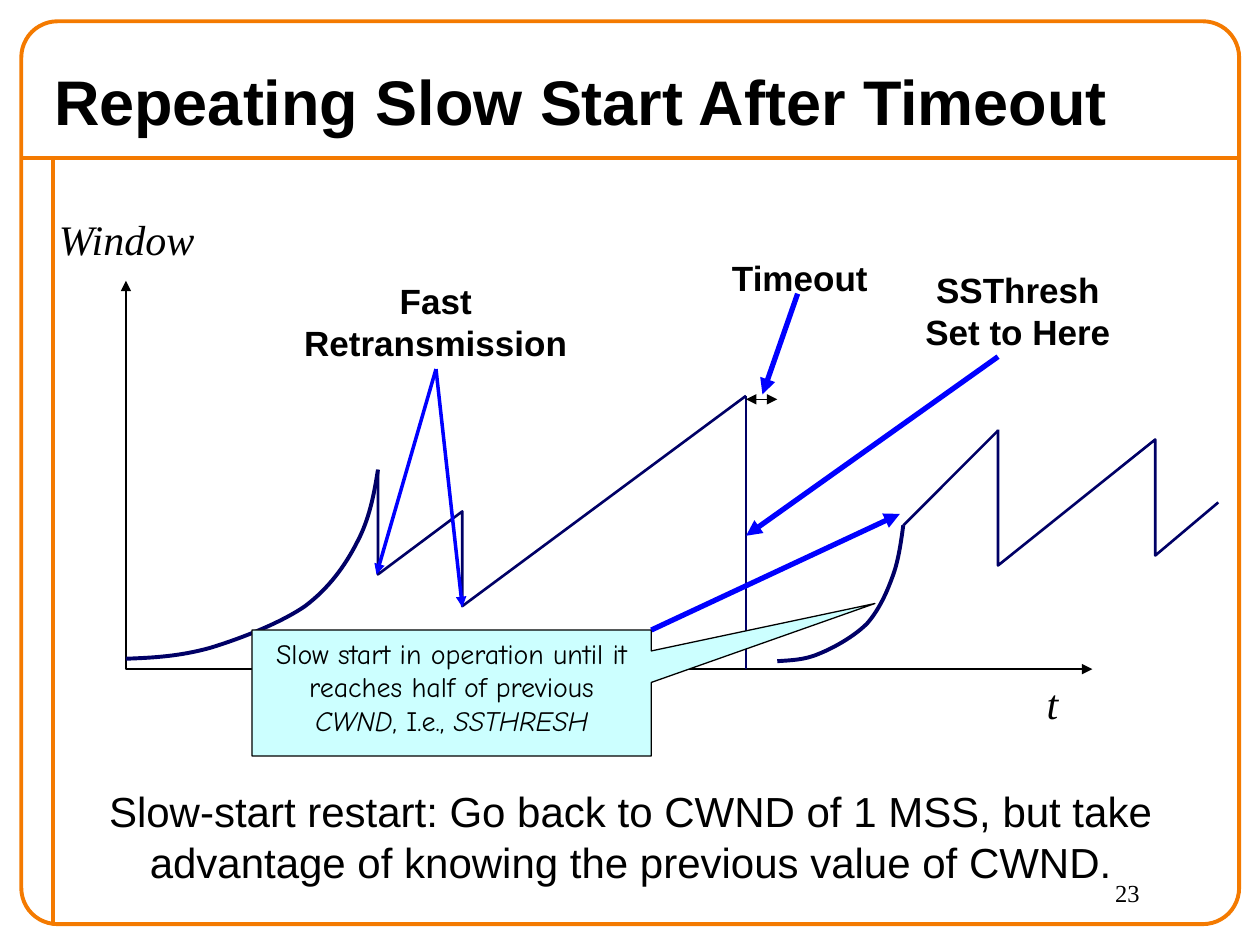
from lxml.etree import SubElement as Sub
from pptx import Presentation
from pptx.dml.color import RGBColor
from pptx.enum.shapes import MSO_CONNECTOR as Link, MSO_SHAPE as Kind
from pptx.enum.text import MSO_ANCHOR as Anchor, PP_ALIGN as Align
from pptx.oxml.ns import qn
from pptx.util import Cm, Pt

ORANGE = RGBColor(0xF4, 0x7A, 0x00)
NAVY = RGBColor(0x00, 0x00, 0x66)
BLUE = RGBColor(0x00, 0x00, 0xFF)
BLACK = RGBColor(0x00, 0x00, 0x00)
AQUA = RGBColor(0xCC, 0xFF, 0xFF)
SANS, SERIF, COMIC = "Arial", "Times New Roman", "Comic Neue"


def style(shape, color, width, ends=()):
    shape.line.color.rgb = color
    shape.line.width = Pt(width)
    line = shape.line._get_or_add_ln()
    for end in ends:
        Sub(line, qn(f"a:{end}End"), type="triangle")


def link(slide, box, start, stop, color, width, ends=()):
    x, y = box[:2]
    line = slide.shapes.add_connector(
        Link.STRAIGHT, Cm(x + start[0]), Cm(y + start[1]),
        Cm(x + stop[0]), Cm(y + stop[1]))
    style(line, color, width, ends)
    Sub(line._element.spPr, qn("a:effectLst"))


def trace(slide, box, points, color, width, ends=(), curved=False):
    spots = [(Cm(box[0] + x), Cm(box[1] + y)) for x, y in points]
    form = slide.shapes.build_freeform(*spots[0])
    form.add_line_segments(spots[1:], close=False)
    shape = form.convert_to_shape()
    shape.shadow.inherit = False
    shape.fill.background()
    style(shape, color, width, ends)
    if curved:
        route = next(shape._element.iter(qn("a:moveTo"))).getparent()
        steps = route.findall(qn("a:lnTo"))
        for i in range(0, len(steps), 3):
            curve = Sub(route, qn("a:cubicBezTo"))
            for step in steps[i:i + 3]:
                curve.append(step[0])
                route.remove(step)


def write(frame, lines, size, font, align=Align.LEFT, bold=False, italic=False):
    frame.text = "\n".join(lines)
    for para in frame.paragraphs:
        para.alignment = align
        for run in para.runs:
            face = run.font
            face.name, face.size = font, Pt(size)
            face.bold, face.italic = bold, italic
            face.color.rgb = BLACK


def label(slide, box, spot, lines, size, font, wrap=True, **look):
    x, y, w, h = spot
    text = slide.shapes.add_textbox(Cm(box[0] + x), Cm(box[1] + y), Cm(w), Cm(h))
    text.text_frame.word_wrap = wrap
    write(text.text_frame, lines, size, font, **look)
    return text


def border(slide, box):
    x, y, w, h = box
    link(slide, box, (0, 2.75), (w, 2.75), ORANGE, 2.25)
    link(slide, box, (0.64, 2.75), (0.64, h), ORANGE, 2.25)
    frame = slide.shapes.add_shape(Kind.ROUNDED_RECTANGLE, Cm(x), Cm(y), Cm(w), Cm(h))
    frame.shadow.inherit = False
    frame.adjustments[0] = 0.04
    frame.fill.background()
    style(frame, ORANGE, 2.25)


def heading(slide, box):
    title = label(slide, box, (0, 0, *box[2:]), ["Repeating Slow Start After Timeout"],
                  36, SANS, bold=True)
    title.text_frame.vertical_anchor = Anchor.MIDDLE


def plot(slide, box):
    w, h = box[2:]
    trace(slide, box, [(0, 0), (0, h), (w, h)], BLACK, 1.5, ("head", "tail"))
    label(slide, box, (18.31, 7.88, 0.74, 1.27), ["t"], 24, SERIF, False, italic=True)
    label(slide, box, (-1.6, -1.49, 3.28, 1.27), ["Window"], 24, SERIF, False, italic=True)
    first = [(5.08, 3.81), (5, 4.32), (4.9, 4.83), (4.65, 5.29), (4.42, 5.74),
             (4.09, 6.2), (3.61, 6.56), (3.1, 6.91), (2.29, 7.22), (1.7, 7.4),
             (1.09, 7.57), (0.56, 7.6), (0, 7.62)]
    again = [(15.67, 4.93), (15.62, 5.29), (15.57, 5.67), (15.44, 6), (15.32, 6.33),
             (15.16, 6.66), (14.94, 6.91), (14.68, 7.17), (14.27, 7.4), (13.97, 7.52),
             (13.67, 7.65), (13.39, 7.65), (13.13, 7.67)]
    for curve in (first, again):
        trace(slide, box, curve, NAVY, 2.25, curved=True)
    trace(slide, box, [(5.08, 3.81), (5.08, 5.92), (6.78, 4.65), (6.78, 6.56),
                       (12.5, 2.32)], NAVY, 1.5)
    trace(slide, box, [(17.58, 3), (17.58, 5.74), (20.75, 3.2), (20.75, 5.54),
                       (22.02, 4.47)], NAVY, 1.5)
    link(slide, box, (12.5, 2.32), (12.5, h), NAVY, 1.5)
    link(slide, box, (15.67, 4.93), (17.58, 3.02), NAVY, 1.5)


def callout(slide, box):
    note = slide.shapes.add_shape(Kind.RECTANGULAR_CALLOUT, *map(Cm, box))
    note.shadow.inherit = False
    note.adjustments[0], note.adjustments[1] = 1.06, -0.71
    note.fill.solid()
    note.fill.fore_color.rgb = AQUA
    style(note, BLACK, 0.75)
    frame = note.text_frame
    frame.word_wrap = True
    frame.vertical_anchor = Anchor.TOP
    para = frame.paragraphs[0]
    para.alignment = Align.CENTER
    parts = ["Slow start in operation until it reaches half of previous ",
             "CWND", ", I.e., ", "SSTHRESH"]
    for i, part in enumerate(parts):
        run = para.add_run()
        run.text = part
        run.font.name, run.font.size = COMIC, Pt(16)
        run.font.italic = i % 2 == 1
        run.font.color.rgb = BLACK


def events(slide, box):
    arrows = [((10.59, 7.04), (15.6, 4.7), 3), ((13.54, 0.26), (12.83, 2.29), 3),
              ((6.25, 1.78), (5.05, 5.92), 2), ((6.25, 1.78), (6.78, 6.58), 2),
              ((17.58, 1.53), (12.5, 5.14), 3)]
    for start, stop, width in arrows:
        link(slide, box, start, stop, BLUE, width, ("tail",))
    link(slide, box, (12.5, 2.39), (13.13, 2.39), BLACK, 0.75, ("head", "tail"))
    names = [((11.63, -0.61, 3.91, 1.09), ["Timeout"]),
             ((2.97, -0.15, 6.55, 1.96), ["Fast Retransmission"]),
             ((15.44, -0.38, 5.08, 1.96), ["SSThresh", "Set to Here"])]
    for spot, lines in names:
        label(slide, box, spot, lines, 20, SANS, align=Align.CENTER, bold=True)


def footer(slide, box):
    label(slide, box, (0, 0, 21.77, 2.29),
          ["Slow-start restart: Go back to CWND of 1 MSS, but take advantage of "
           "knowing the previous value of CWND."], 24, SANS, align=Align.CENTER)
    label(slide, box, (20.4, 1.86, 2.54, 1.06), ["23"], 14, SERIF)


def main():
    deck = Presentation()
    deck.slide_width, deck.slide_height = Cm(25.4), Cm(19.05)
    slide = deck.slides.add_slide(deck.slide_layouts[6])
    area = (2.54, 5.66, 19.48, 7.83)
    border(slide, (0.43, 0.43, 24.55, 18.2))
    heading(slide, (0.84, 1.07, 24.55, 1.9))
    plot(slide, area)
    callout(slide, (5.08, 12.7, 8.05, 2.54))
    events(slide, area)
    footer(slide, (1.83, 15.72, 22.94, 2.92))
    deck.save("out.pptx")


if __name__ == "__main__":
    main()
